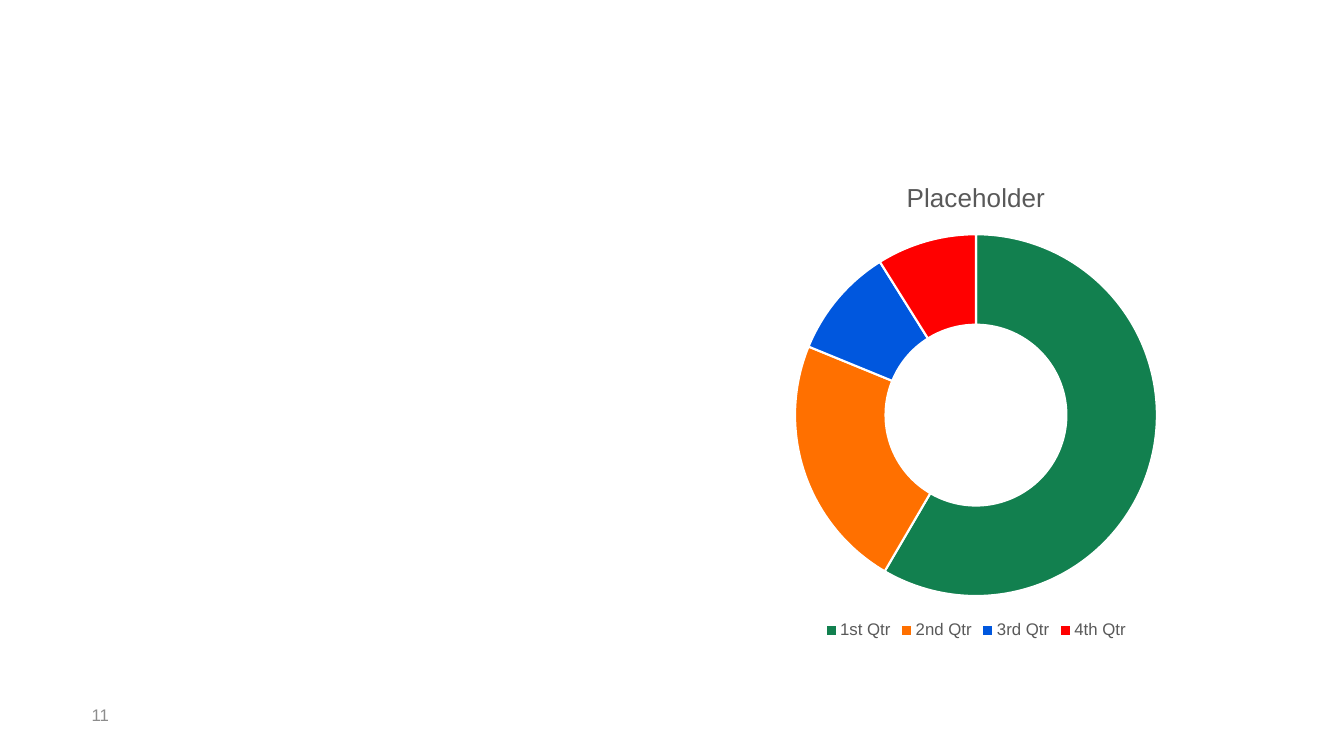
from pptx import Presentation
from pptx.chart.data import CategoryChartData
from pptx.dml.color import RGBColor
from pptx.enum.chart import XL_CHART_TYPE as ChartType, XL_LEGEND_POSITION as LegendPosition
from pptx.enum.text import MSO_ANCHOR as Anchor
from pptx.util import Inches, Pt

TITLE = "Placeholder"
SERIES = "Series 1"
QUARTERS = [
    ("1st Qtr", 59, "12804F"),
    ("2nd Qtr", 23, "FF7000"),
    ("3rd Qtr", 10, "0057DE"),
    ("4th Qtr", 9, "FF0000"),
]
PAGE = "11"
HOLE_PERCENT = 59
CHART_BOX = (6.88, 1.59, 5.6, 4.79)
PAGE_BOX = (0.81, 6.89, 2.67, 0.4)


def rgb(color):
    return RGBColor.from_string(color)


def set_font(font, size, color):
    formats = {"name": "Arial", "size": Pt(size), "bold": False}
    for key, value in formats.items():
        setattr(font, key, value)
    font.color.rgb = rgb(color)


def add_doughnut(slide):
    data = CategoryChartData()
    data.categories = [quarter for quarter, _, _ in QUARTERS]
    data.add_series(SERIES, [value for _, value, _ in QUARTERS])
    chart = slide.shapes.add_chart(
        ChartType.DOUGHNUT, *map(Inches, CHART_BOX), data).chart
    set_font(chart.font, 10, "000000")

    chart.has_title = True
    heading = chart.chart_title.text_frame
    heading.text = TITLE
    set_font(heading.paragraphs[0].runs[0].font, 18.6, "595959")
    chart.chart_title.include_in_layout = False

    chart.has_legend = True
    chart.legend.position = LegendPosition.BOTTOM
    chart.legend.include_in_layout = False
    set_font(chart.legend.font, 12, "595959")

    doughnut = chart.plots[0]
    doughnut.vary_by_categories = True
    for hole in chart.element.xpath(".//c:holeSize"):
        hole.set("val", str(HOLE_PERCENT))
    for index, (_, _, color) in enumerate(QUARTERS):
        slice_format = doughnut.series[0].points[index].format
        slice_format.fill.solid()
        slice_format.fill.fore_color.rgb = rgb(color)
        slice_format.line.color.rgb = rgb("FFFFFF")
        slice_format.line.width = Pt(1.5)


def add_page_number(slide):
    frame = slide.shapes.add_textbox(*map(Inches, PAGE_BOX)).text_frame
    frame.word_wrap = True
    frame.vertical_anchor = Anchor.MIDDLE
    frame.text = PAGE
    set_font(frame.paragraphs[0].runs[0].font, 12, "8C8C8C")


def main():
    deck = Presentation()
    deck.slide_width, deck.slide_height = Inches(13.33), Inches(7.5)
    slide = deck.slides.add_slide(deck.slide_layouts[6])
    add_doughnut(slide)
    add_page_number(slide)
    deck.save("out.pptx")


if __name__ == "__main__":
    main()
